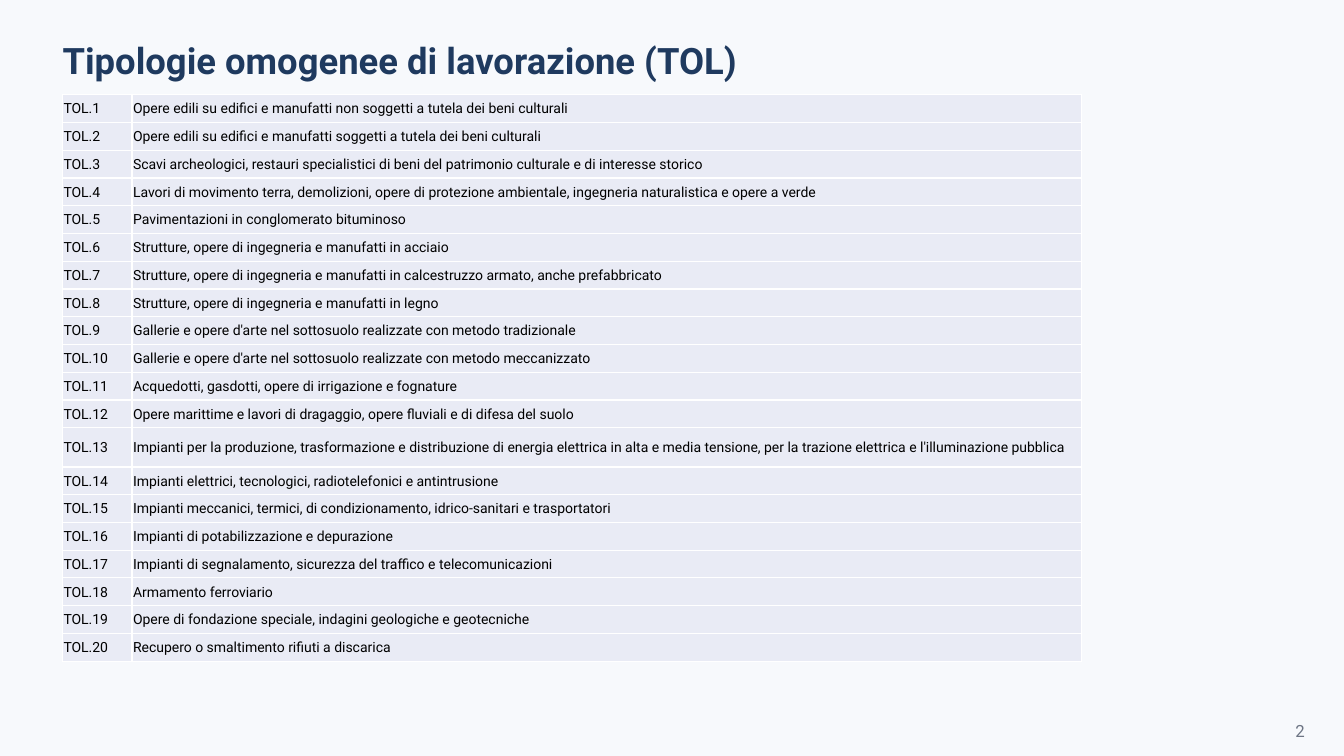
from pptx import Presentation
from pptx.dml.color import RGBColor
from pptx.enum.text import MSO_ANCHOR as Anchor
from pptx.oxml import parse_xml
from pptx.oxml.ns import nsdecls
from pptx.util import Inches, Pt

COLORS = {
    "background": "F7F9FC",
    "title": "1F3A5F",
    "cell": "E9EBF5",
    "border": "FFFFFF",
    "text": "000000",
    "number": "6D7584",
}

WORK_TYPES = [
    "Opere edili su edifici e manufatti non soggetti a tutela dei beni culturali",
    "Opere edili su edifici e manufatti soggetti a tutela dei beni culturali",
    "Scavi archeologici, restauri specialistici di beni del patrimonio culturale e di interesse storico",
    "Lavori di movimento terra, demolizioni, opere di protezione ambientale, "
    "ingegneria naturalistica e opere a verde",
    "Pavimentazioni in conglomerato bituminoso",
    "Strutture, opere di ingegneria e manufatti in acciaio",
    "Strutture, opere di ingegneria e manufatti in calcestruzzo armato, anche prefabbricato",
    "Strutture, opere di ingegneria e manufatti in legno",
    "Gallerie e opere d'arte nel sottosuolo realizzate con metodo tradizionale",
    "Gallerie e opere d'arte nel sottosuolo realizzate con metodo meccanizzato",
    "Acquedotti, gasdotti, opere di irrigazione e fognature",
    "Opere marittime e lavori di dragaggio, opere fluviali e di difesa del suolo",
    "Impianti per la produzione, trasformazione e distribuzione di energia elettrica "
    "in alta e media tensione, per la trazione elettrica e l'illuminazione pubblica",
    "Impianti elettrici, tecnologici, radiotelefonici e antintrusione",
    "Impianti meccanici, termici, di condizionamento, idrico-sanitari e trasportatori",
    "Impianti di potabilizzazione e depurazione",
    "Impianti di segnalamento, sicurezza del traffico e telecomunicazioni",
    "Armamento ferroviario",
    "Opere di fondazione speciale, indagini geologiche e geotecniche",
    "Recupero o smaltimento rifiuti a discarica",
]
TALL_ROW = 12
TALL_HEIGHT = 0.39
TABLE_HEIGHT = 5.62


class SlideBuilder:
    font = "Roboto"

    def __init__(self, presentation):
        self.slide = presentation.slides.add_slide(presentation.slide_layouts[5])
        fill = self.slide.background.fill
        fill.solid()
        fill.fore_color.rgb = self.color("background")

    def color(self, name):
        return RGBColor.from_string(COLORS[name])

    def add_run(self, paragraph, text, size, color, bold=False):
        run = paragraph.add_run()
        run.text = text
        run.font.name = self.font
        run.font.size = Pt(size)
        run.font.bold = bold
        run.font.color.rgb = self.color(color)

    def place_title(self, text, left, top, width, height):
        title = self.slide.shapes.title
        title.left, title.top = Inches(left), Inches(top)
        title.width, title.height = Inches(width), Inches(height)
        frame = title.text_frame
        frame.margin_left = frame.margin_right = frame.margin_top = frame.margin_bottom = 0
        frame.vertical_anchor = Anchor.MIDDLE
        frame.word_wrap = True
        paragraph = frame.paragraphs[0]
        paragraph.alignment = 1
        self.add_run(paragraph, text, 26, "title", bold=True)

    def add_text(self, text, left, top, width, height, size, color):
        shape = self.slide.shapes.add_textbox(Inches(left), Inches(top), Inches(width), Inches(height))
        shape.text_frame.word_wrap = True
        self.add_run(shape.text_frame.paragraphs[0], text, size, color)

    def format_cell(self, cell, text):
        cell.margin_left = cell.margin_right = cell.margin_top = Inches(0.01)
        cell.margin_bottom = 0
        cell.vertical_anchor = Anchor.MIDDLE
        self.add_run(cell.text_frame.paragraphs[0], text, 10, "text")
        cell.fill.solid()
        cell.fill.fore_color.rgb = self.color("cell")
        properties = cell._tc.get_or_add_tcPr()
        for position, side in enumerate(("lnL", "lnR", "lnT", "lnB")):
            properties.insert(position, parse_xml(
                f'<a:{side} {nsdecls("a")} w="{Pt(1)}"><a:solidFill>'
                f'<a:srgbClr val="{COLORS["border"]}"/></a:solidFill></a:{side}>'))

    def add_table(self, rows, left, top, widths, heights):
        table = self.slide.shapes.add_table(
            len(rows), len(widths), Inches(left), Inches(top),
            Inches(sum(widths)), Inches(sum(heights))).table
        table.first_row = table.horz_banding = False
        for column, width in zip(table.columns, widths):
            column.width = Inches(width)
        for row, height, texts in zip(table.rows, heights, rows):
            row.height = Inches(height)
            for cell, text in zip(row.cells, texts):
                self.format_cell(cell, text)


def main():
    presentation = Presentation()
    presentation.slide_width, presentation.slide_height = Inches(13.33), Inches(7.5)
    builder = SlideBuilder(presentation)
    builder.place_title("Tipologie omogenee di lavorazione (TOL)", 0.62, 0.38, 10.94, 0.42)
    rows = [(f"TOL.{number}", text) for number, text in enumerate(WORK_TYPES, 1)]
    heights = [(TABLE_HEIGHT - TALL_HEIGHT) / (len(rows) - 1)] * len(rows)
    heights[TALL_ROW] = TALL_HEIGHT
    builder.add_table(rows, 0.62, 0.94, [0.69, 9.42], heights)
    builder.add_text("2", 12.75, 7.1, 0.5, 0.33, 12, "number")
    presentation.save("out.pptx")


if __name__ == "__main__":
    main()
